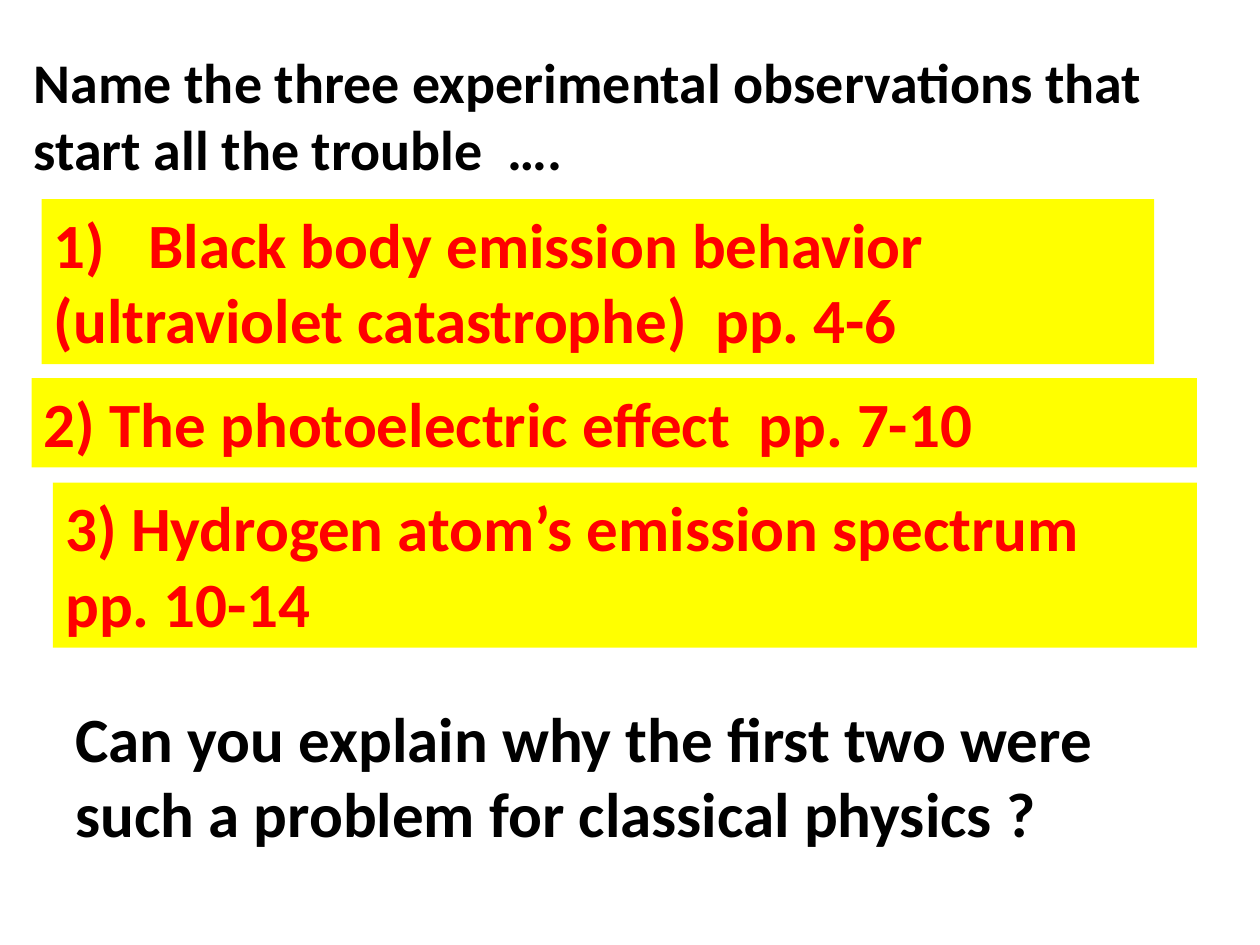
from pptx import Presentation
from pptx.dml.color import RGBColor as RGB
from pptx.enum.text import MSO_AUTO_SIZE as Fit
from pptx.oxml.ns import qn
from pptx.util import Inches, Pt
from lxml.etree import SubElement as Sub

BLACK = RGB(0x00, 0x00, 0x00)
RED = RGB(0xFF, 0x00, 0x00)
YELLOW = RGB(0xFF, 0xFF, 0x00)

deck = Presentation()
deck.slide_width, deck.slide_height = Inches(10), Inches(7.5)
slide = deck.slides.add_slide(deck.slide_layouts[6])

# Question, three answers, follow-up: place, size, colour, fill, lines
parts = [
    ((0.17, 0.33, 9.5, 1.18), 32, BLACK, None,
     ["Name the three experimental observations that start all the trouble  …."]),
    ((0.33, 1.58, 8.83, 1.31), 36, RED, YELLOW,
     ["1)\tBlack body emission behavior (ultraviolet catastrophe)  pp. 4-6"]),
    ((0.25, 3, 9.25, 0.71), 36, RED, YELLOW,
     ["2) The photoelectric effect  pp. 7-10"]),
    ((0.42, 3.83, 9.08, 1.31), 36, RED, YELLOW,
     ["3) Hydrogen atom’s emission spectrum", "pp. 10-14"]),
    ((0.5, 5.5, 9.08, 1.31), 36, BLACK, None,
     ["Can you explain why the first two were such a problem for classical physics ?"]),
]

for place, size, color, fill, lines in parts:
    box = slide.shapes.add_textbox(*map(Inches, place))
    if fill is not None:
        box.fill.solid()
        box.fill.fore_color.rgb = fill
    frame = box.text_frame
    frame.word_wrap = True
    frame.auto_size = Fit.SHAPE_TO_FIT_TEXT
    frame.text = "\n".join(lines)
    style = {"name": "Calibri", "size": Pt(size), "bold": True}
    for para in frame.paragraphs:
        # Tab stop that sets the gap after the number
        if "\t" in para.text:
            tabs = Sub(para._p.get_or_add_pPr(), qn("a:tabLst"))
            Sub(tabs, qn("a:tab"), pos=str(Inches(0.75)), algn="l")
        for run in para.runs:
            for key, value in style.items():
                setattr(run.font, key, value)
            run.font.color.rgb = color

deck.save("out.pptx")
